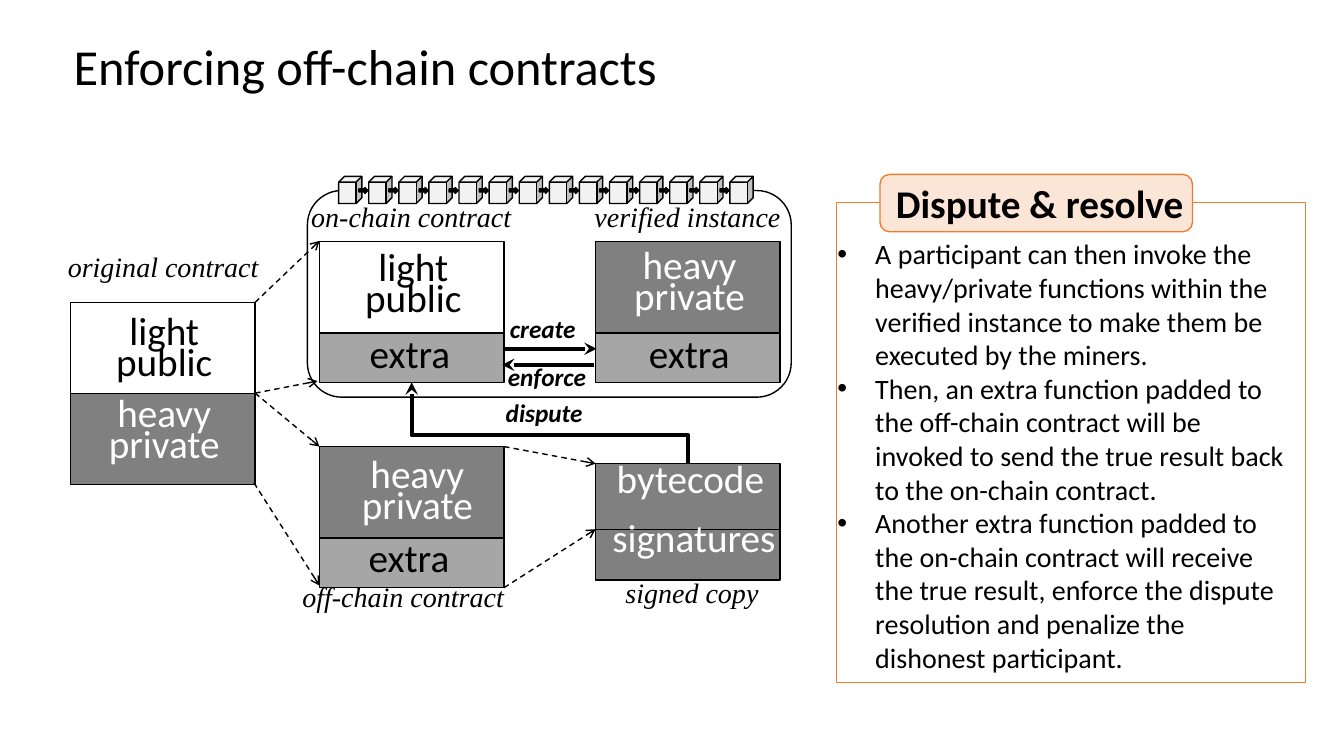
from lxml.etree import SubElement
from pptx import Presentation
from pptx.dml.color import RGBColor
from pptx.enum.dml import MSO_LINE, MSO_PATTERN
from pptx.enum.shapes import MSO_CONNECTOR, MSO_SHAPE
from pptx.enum.text import MSO_ANCHOR, MSO_AUTO_SIZE, PP_ALIGN
from pptx.oxml.ns import qn
from pptx.util import Pt

BLACK = RGBColor(0x00, 0x00, 0x00)
WHITE = RGBColor(0xFF, 0xFF, 0xFF)
DARK_GRAY = RGBColor(0x80, 0x80, 0x80)
MID_GRAY = RGBColor(0xA6, 0xA6, 0xA6)
PALE_GRAY = RGBColor(0xF2, 0xF2, 0xF2)
ORANGE = RGBColor(0xED, 0x7D, 0x31)
PEACH = RGBColor(0xFB, 0xE5, 0xD6)

TITLE = {"name": "Calibri", "size": Pt(36), "bold": False}
BLOCK = {"name": "Calibri", "size": Pt(28)}
HEADING = {"name": "Calibri", "size": Pt(28), "bold": True}
BODY = {"name": "Calibri", "size": Pt(20)}
ACTION = {"name": "Calibri", "size": Pt(18), "bold": True, "italic": True}
CAPTION = {"name": "Times New Roman", "size": Pt(20), "italic": True}


class Diagram:
    """Holds the slide and draws its elements; all lengths are in points."""

    def __init__(self, slide):
        self.slide = slide
        self.shapes = slide.shapes

    def set_lines(self, frame, lines, style, color=BLACK, align=PP_ALIGN.LEFT, spacing=None):
        frame.word_wrap = True
        frame.vertical_anchor = MSO_ANCHOR.TOP
        frame.auto_size = MSO_AUTO_SIZE.SHAPE_TO_FIT_TEXT
        frame.text = "\n".join(lines)
        for paragraph in frame.paragraphs:
            paragraph.alignment = align
            if spacing:
                paragraph.line_spacing = Pt(spacing)
            font = paragraph.runs[0].font
            for attribute, value in style.items():
                setattr(font, attribute, value)
            font.color.rgb = color

    def title(self, text, left, top, width, height):
        heading = self.shapes.title
        heading.left, heading.top = Pt(left), Pt(top)
        heading.width, heading.height = Pt(width), Pt(height)
        self.set_lines(heading.text_frame, [text], TITLE)

    def text(self, lines, left, top, width, height, style, **layout):
        label = self.shapes.add_textbox(Pt(left), Pt(top), Pt(width), Pt(height))
        self.set_lines(label.text_frame, lines, style, **layout)
        return label

    def bullets(self, lines, left, top, width, height, indent):
        label = self.text(lines, left, top, width, height, BODY)
        for paragraph in label.text_frame.paragraphs:
            properties = paragraph._p.get_or_add_pPr()
            properties.set("marL", str(Pt(indent)))
            properties.set("indent", str(-Pt(indent)))
            SubElement(properties, qn("a:buFont"), typeface="Arial")
            SubElement(properties, qn("a:buChar"), char="•")

    def shape(self, kind, left, top, width, height, fill=None, pattern=None, line=BLACK):
        figure = self.shapes.add_shape(kind, Pt(left), Pt(top), Pt(width), Pt(height))
        figure.shadow.inherit = False
        figure.line.color.rgb = line
        figure.line.width = Pt(1)
        if pattern:
            figure.fill.patterned()
            figure.fill.pattern = pattern
            figure.fill.fore_color.rgb = fill
            figure.fill.back_color.rgb = WHITE
        elif fill:
            figure.fill.solid()
            figure.fill.fore_color.rgb = fill
        else:
            figure.fill.background()
        return figure

    def arrow(self, start, end, width, head, dash=None, kind=MSO_CONNECTOR.STRAIGHT):
        link = self.shapes.add_connector(kind, *map(Pt, start + end))
        link.line.color.rgb = BLACK
        link.line.width = Pt(width)
        if dash:
            link.line.dash_style = dash
        properties = link._element.spPr
        SubElement(properties.find(qn("a:ln")), qn("a:tailEnd"), type=head)
        SubElement(properties, qn("a:effectLst"))
        return link

    def elbow_up(self, source, target, width, head, bend):
        """Join the top of source to the bottom of target, which is up and left."""
        start = (source.left + source.width // 2, source.top)
        end = (target.left + target.width // 2, target.top + target.height)
        link = self.arrow((0, 0), (1, 1), width, head, kind=MSO_CONNECTOR.ELBOW)
        link.begin_connect(source, 0)
        link.end_connect(target, 2)
        # A quarter turn swaps the two extents around the shared centre
        link.width, link.height = start[1] - end[1], start[0] - end[0]
        link.left = (start[0] + end[0] - link.width) // 2
        link.top = (start[1] + end[1] - link.height) // 2
        transform = link._element.spPr.find(qn("a:xfrm"))
        transform.attrib.pop("flipH", None)
        transform.set("rot", "16200000")
        transform.set("flipV", "1")
        guides = link._element.spPr.find(qn("a:prstGeom")).find(qn("a:avLst"))
        SubElement(guides, qn("a:gd"), name="adj1", fmla=f"val {bend}")


def main():
    presentation = Presentation()
    presentation.slide_width, presentation.slide_height = Pt(960), Pt(540)
    diagram = Diagram(presentation.slides.add_slide(presentation.slide_layouts[5]))
    diagram.title("Enforcing off-chain contracts", 45.4, 21.6, 894.2, 51.1)

    # Contract blocks: left, top, height, fill, pattern
    horizontal, vertical = MSO_PATTERN.DARK_HORIZONTAL, MSO_PATTERN.DARK_VERTICAL
    block_width, tall, low = 131.8, 65.3, 35.3
    original_left, chain_left, copy_left = 50.4, 228.2, 425.5
    blocks = {
        "original public": (original_left, 216, tall, None, None),
        "original private": (original_left, 281, tall, DARK_GRAY, None),
        "off-chain private": (chain_left, 319, tall, DARK_GRAY, None),
        "off-chain extra": (chain_left, 384.5, low, MID_GRAY, horizontal),
        "on-chain public": (chain_left, 172.6, tall, None, None),
        "on-chain extra": (chain_left, 237.8, low, MID_GRAY, vertical),
        "signatures": (copy_left, 378.4, 36, DARK_GRAY, None),
        "bytecode": (copy_left, 331.2, 47.2, DARK_GRAY, None),
        "verified private": (copy_left, 172.6, tall, DARK_GRAY, None),
        "verified extra": (copy_left, 238.1, low, MID_GRAY, horizontal),
    }
    placed = {
        part: diagram.shape(MSO_SHAPE.RECTANGLE, left, top, block_width, height, fill, pattern)
        for part, (left, top, height, fill, pattern) in blocks.items()
    }

    # Block labels
    public, private = ["light", "public"], ["heavy", "private"]
    for lines, left, top, color in (
        (public, 66.2, 226.8, BLACK),
        (private, 66.2, 285.8, WHITE),
        (private, 247, 329, WHITE),
        (private, 441.4, 180, WHITE),
        (public, 244.1, 181.4, BLACK),
    ):
        diagram.text(lines, left, top, 102.2, 53.3, BLOCK,
                     color=color, align=PP_ALIGN.CENTER, spacing=22)
    for left, top in ((257, 231.8), (256.3, 377.3), (456.5, 231.8)):
        diagram.text(["extra"], left, top, 84.2, 41, BLOCK)
    for word, top, width in (("bytecode", 339.1, 126.7), ("signatures", 380.9, 131.8)):
        diagram.text([word], 429.8, top, width, 26.6, BLOCK,
                     color=WHITE, align=PP_ALIGN.CENTER, spacing=15.6)

    # Blockchain boundary and its row of cubes
    diagram.shape(MSO_SHAPE.ROUNDED_RECTANGLE, 219.6, 136.1, 345.6, 147.6)
    cube_count, pitch = 14, 21.5
    for index in range(cube_count):
        offset = index * pitch
        cube = diagram.shape(MSO_SHAPE.CUBE, 241.9 + offset, 126, 16.6, 19.4, PALE_GRAY)
        cube.adjustments[0] = 0.25
        if index < cube_count - 1:
            diagram.shape(MSO_SHAPE.RIGHT_ARROW, 256.3 + offset, 133.9, 6.5, 4.3, BLACK)

    # Dashed derivation arrows
    for start, end in (
        ((360, 419.8), (425.5, 378)),
        ((360, 319), (425.5, 331.2)),
        ((182.2, 216), (228.2, 172.1)),
        ((182.2, 280.8), (226.8, 272.2)),
        ((182.2, 280.8), (228.2, 319)),
        ((181.4, 344.9), (228.2, 418.3)),
    ):
        diagram.arrow(start, end, 1, "arrow", MSO_LINE.DASH)

    # Dispute, create and enforce
    diagram.elbow_up(placed["bytecode"], placed["on-chain extra"], 3, "stealth", 34900)
    diagram.arrow((360.7, 249.1), (426.2, 249.1), 3, "stealth")
    diagram.arrow((424.1, 260.6), (358.6, 260.6), 3, "stealth")
    for action, left, top in (
        ("dispute", 354.2, 280.1), ("create", 357.1, 220.3), ("enforce", 355.7, 254.9),
    ):
        diagram.text([action], left, top, 84.2, 28.8, ACTION)

    # Captions
    for caption, left, top, width in (
        ("original contract", 7.9, 182.9, 217.4),
        ("on-chain contract", 205.6, 147.6, 176.4),
        ("off-chain contract", 192.6, 419, 190.8),
        ("verified instance", 398.2, 147.6, 185.8),
        ("signed copy", 398.9, 416.2, 190.8),
    ):
        diagram.text([caption], left, top, width, 25.2, CAPTION,
                     align=PP_ALIGN.CENTER, spacing=15.6)

    # Dispute & resolve panel
    diagram.shape(MSO_SHAPE.RECTANGLE, 597.6, 144.7, 334.8, 342.7, line=ORANGE)
    diagram.bullets([
        "A participant can then invoke the heavy/private functions within the verified "
        "instance to make them be executed by the miners.",
        "Then, an extra function padded to the off-chain contract will be invoked to send "
        "the true result back to the on-chain contract.",
        "Another extra function padded to the on-chain contract will receive the true "
        "result, enforce the dispute resolution and penalize the dishonest participant.",
    ], 591.1, 165.6, 338.4, 322.6, 27)
    diagram.shape(MSO_SHAPE.ROUNDED_RECTANGLE, 628.6, 124.6, 223.2, 41, PEACH, line=ORANGE)
    diagram.text(["Dispute & resolve"], 632.9, 124.6, 261.4, 41, HEADING)

    presentation.save("out.pptx")


if __name__ == "__main__":
    main()
